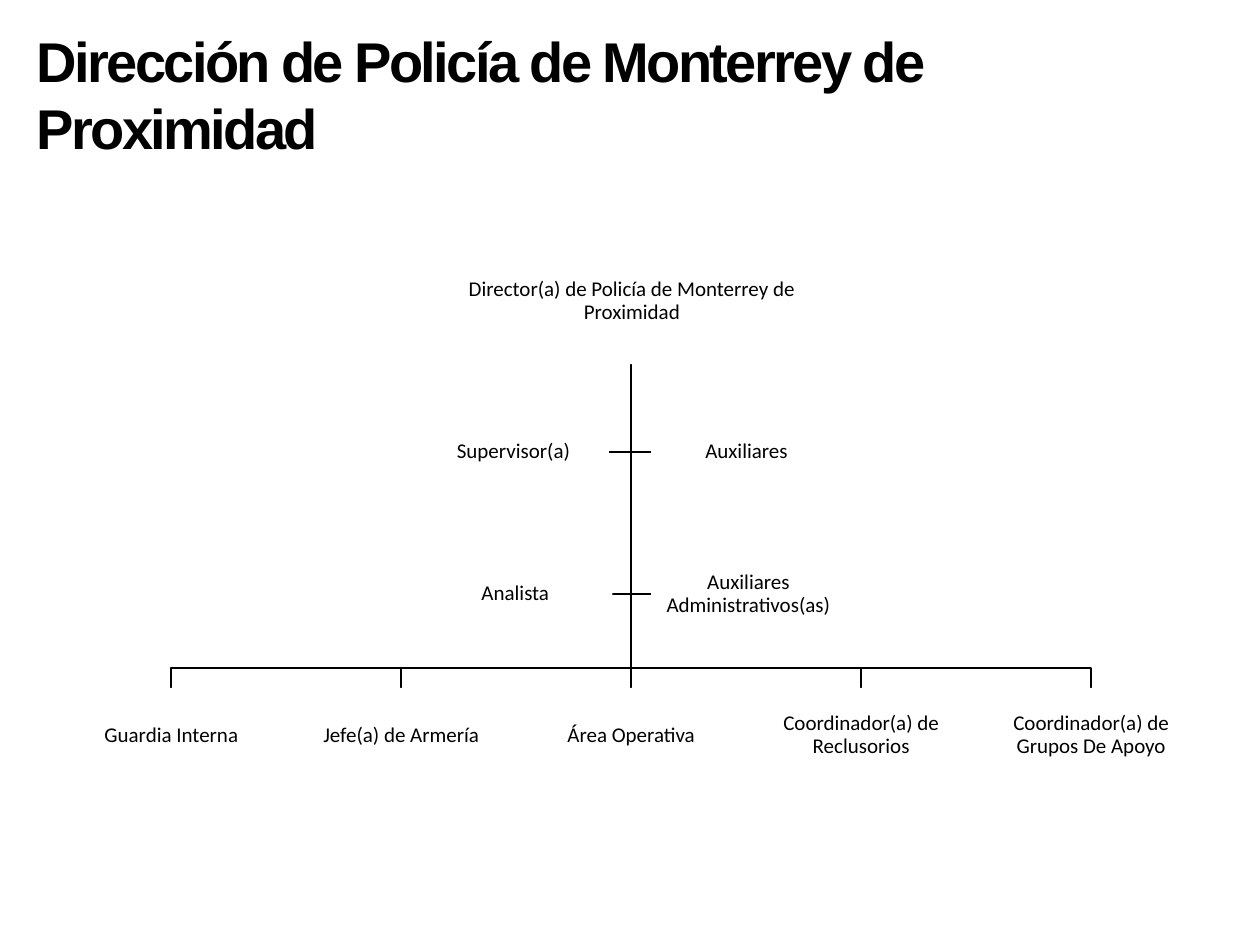
from lxml import etree
from pptx import Presentation
from pptx.dml.color import RGBColor
from pptx.enum.shapes import MSO_CONNECTOR, MSO_SHAPE
from pptx.enum.text import MSO_ANCHOR, MSO_AUTO_SIZE, PP_ALIGN
from pptx.oxml.ns import qn
from pptx.util import Inches, Pt

RECT = MSO_SHAPE.RECTANGLE
STRAIGHT = MSO_CONNECTOR.STRAIGHT
MIDDLE, TOP = MSO_ANCHOR.MIDDLE, MSO_ANCHOR.TOP
CENTER, LEFT = PP_ALIGN.CENTER, PP_ALIGN.LEFT
COLORS = {name: RGBColor.from_string(value)
          for name, value in {"ink": "000000", "box": "FFFFFF"}.items()}

prs = Presentation()
prs.slide_width, prs.slide_height = Inches(10), Inches(7.5)
slide = prs.slides.add_slide(prs.slide_layouts[5])

# Title
title = slide.shapes.title
title.left, title.top = Inches(0.19), Inches(0.16)
title.width, title.height = Inches(7.46), Inches(1.18)
title.text_frame.text = "Dirección de Policía de Monterrey de Proximidad"
title.text_frame.vertical_anchor = TOP
title.text_frame.auto_size = MSO_AUTO_SIZE.SHAPE_TO_FIT_TEXT
heading = title.text_frame.paragraphs[0]
heading.alignment = LEFT
heading.font.name, heading.font.size, heading.font.bold = "Arial", Pt(32), True
heading.font.color.rgb = COLORS["ink"]
heading.runs[0].font._element.set("spc", "-150")

# Organisation chart measures
TRUNK_X, TRUNK_TOP = 5.01, 2.89
BUS_Y, AREAS_TOP = 5.3, 5.46
AREA_WIDTH, AREA_STEP, BOX_HEIGHT = 1.51, 1.825, 0.75

director = ("Director(a) de Policía de Monterrey de Proximidad", 3.66, 1.89, 2.71, 1)
staff = [
    ("Supervisor(a)", 3.32, 3.21, 1.51, BOX_HEIGHT),
    ("Auxiliares", 5.17, 3.21, 1.51, BOX_HEIGHT),
    ("Analista", 3.32, 4.28, 1.54, 0.87),
    ("Auxiliares Administrativos(as)", 5.17, 4.28, 1.54, 0.87),
]
area_names = ["Guardia Interna", "Jefe(a) de Armería", "Área Operativa",
              "Coordinador(a) de Reclusorios", "Coordinador(a) de Grupos De Apoyo"]
area_centers = [TRUNK_X + (i - 2) * AREA_STEP for i in range(len(area_names))]
areas = [(name, x - AREA_WIDTH / 2, AREAS_TOP, AREA_WIDTH, BOX_HEIGHT)
         for name, x in zip(area_names, area_centers)]

# Branches from the trunk to the staff and to the outer areas
branches = []
for name, left, top, width, height in staff:
    edge = left if left > TRUNK_X else left + width
    y = top + height / 2
    branches.append([(TRUNK_X, y), (edge, y)])
for x in area_centers:
    if x != TRUNK_X:
        branches.append([(TRUNK_X, BUS_Y), (x, BUS_Y), (x, AREAS_TOP)])

for bends in branches:
    builder = slide.shapes.build_freeform(Inches(TRUNK_X), Inches(TRUNK_TOP))
    builder.add_line_segments([(Inches(x), Inches(y)) for x, y in bends], close=False)
    branch = builder.convert_to_shape()
    branch.shadow.inherit = False
    branch.fill.background()
    branch.line.color.rgb = COLORS["ink"]
    branch.line.width = Pt(1)

# Trunk
trunk = slide.shapes.add_connector(STRAIGHT, Inches(TRUNK_X), Inches(TRUNK_TOP),
                                   Inches(TRUNK_X), Inches(AREAS_TOP))
trunk.line.color.rgb = COLORS["ink"]
trunk.line.width = Pt(1)
etree.SubElement(trunk._element.spPr, qn("a:effectLst"))

# Posts
for name, left, top, width, height in [director, *areas, *staff]:
    post = slide.shapes.add_shape(RECT, Inches(left), Inches(top),
                                  Inches(width), Inches(height))
    post.shadow.inherit = False
    post.fill.solid()
    post.fill.fore_color.rgb = COLORS["box"]
    post.line.fill.background()
    frame = post.text_frame
    frame.text = name
    frame.word_wrap = True
    frame.vertical_anchor = MIDDLE
    frame.margin_left = frame.margin_right = Inches(0.01)
    frame.margin_top = frame.margin_bottom = Inches(0.01)
    label = frame.paragraphs[0]
    label.alignment = CENTER
    label.line_spacing = 0.9
    label.font.name, label.font.size = "Calibri", Pt(12)
    label.font.color.rgb = COLORS["ink"]

prs.save("out.pptx")
